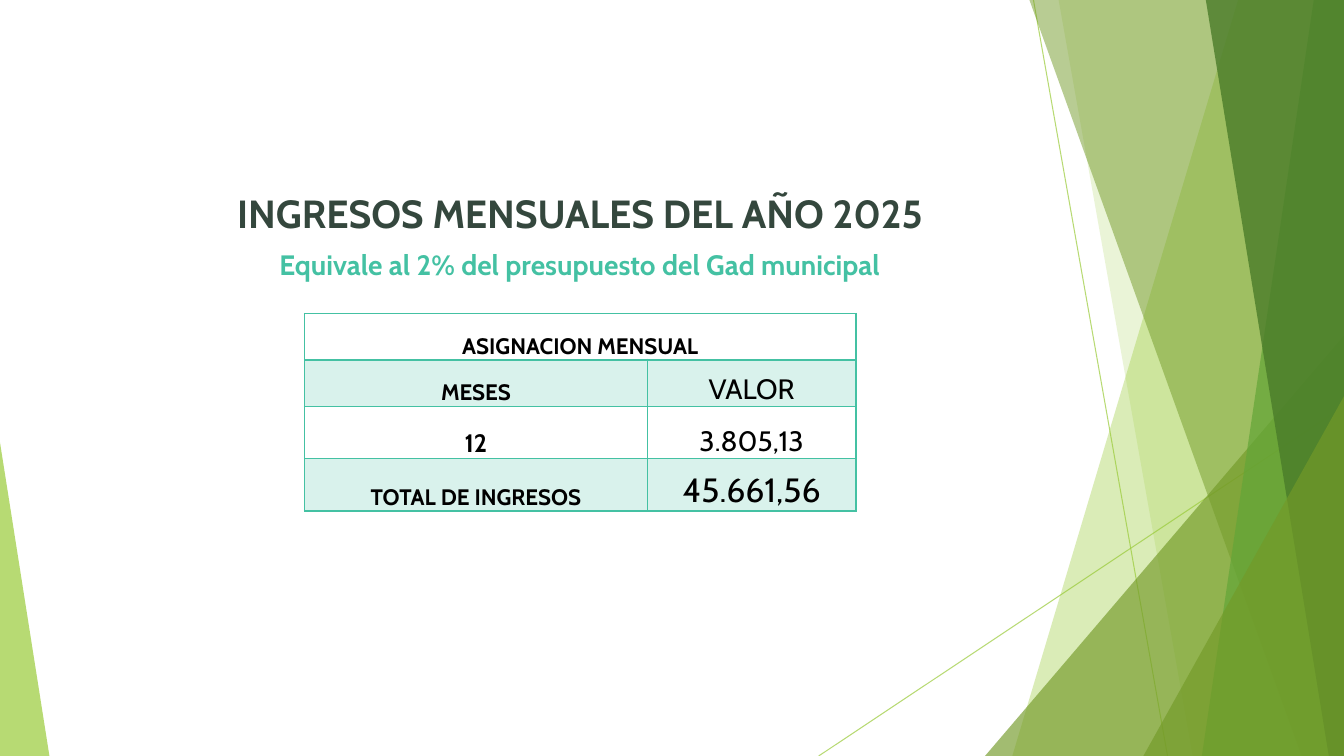
from pptx import Presentation
from pptx.dml.color import RGBColor
from pptx.enum.shapes import MSO_CONNECTOR as Connector, MSO_SHAPE as Shape
from pptx.enum.text import MSO_ANCHOR as Anchor, PP_ALIGN as Align
from pptx.oxml import parse_xml
from pptx.oxml.ns import nsdecls, qn
from pptx.util import Inches, Pt
from lxml import etree

FONT = "Cabin"
LIME, OLIVE, GREEN, FOREST = "99CB38", "739A28", "63A537", "4A7C29"
TEAL, SLATE, BLACK = "44C1A3", "34473D", "000000"
WIDTH, HEIGHT = 13.33, 7.5


def color(value):
    return RGBColor.from_string(value)


def set_alpha(element, percent):
    """Make every solid colour inside the element partly transparent."""
    for node in element.iter(qn("a:srgbClr")):
        etree.SubElement(node, qn("a:alpha")).set("val", str(percent * 1000))


def paint(shape, fill, percent):
    shape.shadow.inherit = False
    shape.fill.solid()
    shape.fill.fore_color.rgb = color(fill)
    shape.line.fill.background()
    set_alpha(shape._element.spPr, percent)


def add_ray(slide, start, end):
    ray = slide.shapes.add_connector(
        Connector.STRAIGHT, *(Inches(value) for value in (*start, *end)))
    ray.line.color.rgb = color(LIME)
    ray.line.width = Pt(0.75)
    properties = ray._element.spPr
    set_alpha(properties, 70)
    etree.SubElement(properties, qn("a:effectLst"))


def add_panel(slide, box, top_left, bottom_left, fill, percent):
    """Add a slanted panel that reaches the right edge of the box."""
    left, top, width, height = box
    right, bottom = left + width, top + height
    corners = [(left + top_left, top), (right, top), (right, bottom),
               (left + bottom_left, bottom)]
    points = [(Inches(x), Inches(y)) for x, y in corners]
    builder = slide.shapes.build_freeform(*points[0])
    builder.add_line_segments(points[1:], close=True)
    paint(builder.convert_to_shape(), fill, percent)


def add_corner(slide, box, width, height, fill, percent, at_right=True):
    """Add a triangle standing in a bottom corner of the box."""
    left, top, box_width, box_height = box
    x = left + box_width - width if at_right else left
    triangle = slide.shapes.add_shape(
        Shape.ISOSCELES_TRIANGLE, Inches(x), Inches(top + box_height - height),
        Inches(width), Inches(height))
    triangle.adjustments[0] = 1 if at_right else 0
    paint(triangle, fill, percent)


def add_facets(slide, box):
    left, top, width, height = box
    right, bottom = left + width, top + height
    add_ray(slide, (left + 10.25, top), (left + 11.58, bottom))
    add_ray(slide, (right, top + 4.03), (left + 8.12, bottom))
    add_panel(slide, box, 12.28, 10.04, LIME, 36)
    add_panel(slide, box, 10.5, 11.83, LIME, 20)
    add_corner(slide, box, 3.56, 4.17, OLIVE, 66)
    add_panel(slide, box, 10.21, 12.91, OLIVE, 50)
    add_panel(slide, box, 13.03, 11.92, GREEN, 70)
    add_panel(slide, box, 11.96, 13.18, FOREST, 80)
    add_corner(slide, box, 1.99, 3.57, OLIVE, 66)
    add_corner(slide, box, 0.49, 3.11, LIME, 70, at_right=False)


def add_run(paragraph, text, size, fill, bold):
    paragraph.alignment = Align.CENTER
    run = paragraph.add_run()
    run.text = text
    run.font.name = FONT
    run.font.size = Pt(size)
    run.font.bold = bold
    run.font.color.rgb = color(fill)


def add_heading(slide, box, text, size, fill):
    frame = slide.shapes.add_textbox(*(Inches(value) for value in box)).text_frame
    frame.word_wrap = True
    add_run(frame.paragraphs[0], text, size, fill, True)


def set_borders(cell, bottom_width):
    properties = cell._tc.get_or_add_tcPr()
    widths = {"lnL": 1, "lnR": 1, "lnT": 1, "lnB": bottom_width}
    for index, (side, width) in enumerate(widths.items()):
        properties.insert(index, parse_xml(
            f'<a:{side} {nsdecls("a")} w="{Pt(width)}"><a:solidFill>'
            f'<a:srgbClr val="{TEAL}"/></a:solidFill></a:{side}>'))


def format_cell(cell, shaded, bottom_width):
    cell.vertical_anchor = Anchor.BOTTOM
    cell.margin_left = cell.margin_right = Inches(0.05)
    cell.margin_top = cell.margin_bottom = 0
    if shaded:
        cell.fill.solid()
        cell.fill.fore_color.rgb = color(TEAL)
        set_alpha(cell._tc.tcPr, 20)
    else:
        cell.fill.background()
    set_borders(cell, bottom_width)


def add_income_table(slide, box):
    rows = [
        (0.46, [("ASIGNACION MENSUAL", 16, True)]),
        (0.46, [("MESES", 16, True), ("VALOR", 20, False)]),
        (0.52, [("12", 18, True), ("3.805,13", 20, False)]),
        (0.52, [("TOTAL DE INGRESOS", 16, True), ("45.661,56", 24, False)]),
    ]
    table = slide.shapes.add_table(
        len(rows), 2, *(Inches(value) for value in box)).table
    table.first_row = table.horz_banding = False
    for column, width in zip(table.columns, (3.4, 2.07)):
        column.width = Inches(width)
    table.cell(0, 0).merge(table.cell(0, 1))
    for index, (height, entries) in enumerate(rows):
        table.rows[index].height = Inches(height)
        for cell in table.rows[index].cells:
            format_cell(cell, index % 2 == 1, 2 if index == 0 else 1)
        for cell, (text, size, bold) in zip(table.rows[index].cells, entries):
            paragraph = cell.text_frame.paragraphs[0]
            paragraph.line_spacing = 1.07
            paragraph.space_after = Pt(8)
            add_run(paragraph, text, size, BLACK, bold)


def build_income_slide(presentation):
    slide = presentation.slides.add_slide(presentation.slide_layouts[6])
    add_facets(slide, (0, 0, WIDTH, HEIGHT))
    add_heading(slide, (0.76, 1.83, 9.98, 0.57),
                "INGRESOS MENSUALES DEL AÑO 2025", 28, SLATE)
    add_heading(slide, (2.13, 2.41, 7.24, 0.44),
                "Equivale al 2% del presupuesto del Gad municipal", 20, TEAL)
    add_income_table(slide, (3.02, 3.11, 5.47, 1.96))


def main():
    presentation = Presentation()
    presentation.slide_width = Inches(WIDTH)
    presentation.slide_height = Inches(HEIGHT)
    build_income_slide(presentation)
    presentation.save("out.pptx")


if __name__ == "__main__":
    main()
